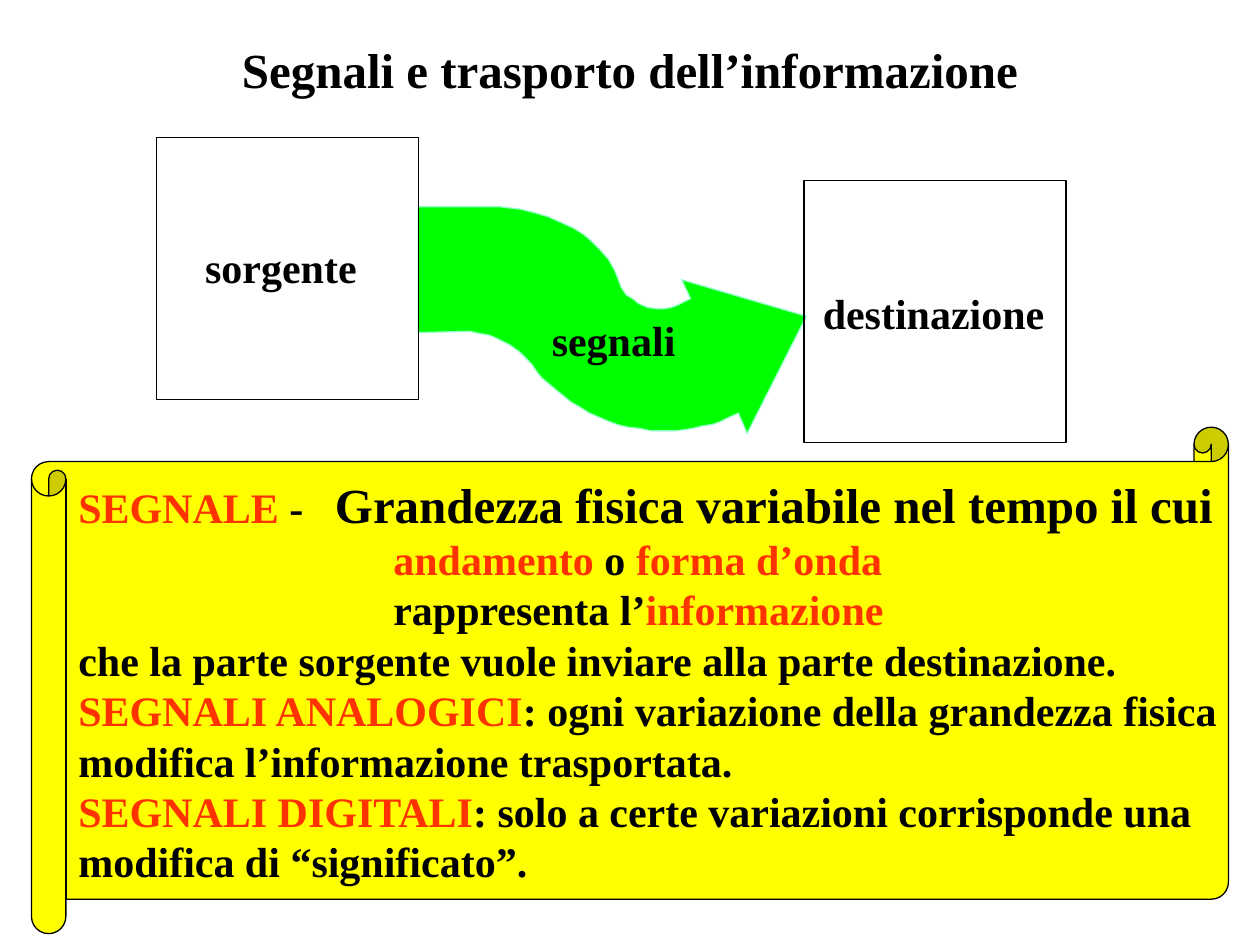
from pptx import Presentation
from pptx.dml.color import RGBColor
from pptx.enum.shapes import MSO_SHAPE
from pptx.enum.text import MSO_ANCHOR, PP_ALIGN
from pptx.util import Inches, Pt

BLACK = RGBColor(0x00, 0x00, 0x00)
RED = RGBColor(0xFF, 0x33, 0x00)
YELLOW = RGBColor(0xFF, 0xFF, 0x00)
GREEN = RGBColor(0x00, 0xFF, 0x00)
MINT = RGBColor(0x99, 0xFF, 0xCC)

ARROW_POINTS = [
    (332, 264), (332, 164), (396, 164), (404, 165), (413, 166), (425, 169),
    (435, 172), (444, 176), (455, 181), (463, 186), (469, 191), (476, 198),
    (483, 206), (488, 215), (490, 220), (493, 228), (497, 234), (502, 237),
    (507, 241), (514, 244), (521, 245), (527, 245), (533, 244), (538, 242),
    (548, 237), (541, 222), (640, 251), (593, 344), (586, 328), (577, 332),
    (571, 335), (565, 337), (558, 338), (550, 340), (544, 341), (536, 342),
    (526, 342), (517, 342), (507, 340), (498, 339), (490, 337), (482, 334),
    (475, 331), (468, 328), (460, 323), (453, 319), (447, 314), (442, 310),
    (436, 305), (430, 300), (426, 295), (422, 289), (418, 285), (414, 281),
    (412, 279), (409, 277), (405, 274), (401, 272), (397, 270), (393, 268),
    (388, 266), (382, 265), (377, 264), (373, 263),
]

DEFINITION = [
    (0, [("SEGNALE", RED, 24), (" -   ", BLACK, 24),
         ("Grandezza fisica variabile nel tempo il cui", BLACK, 28)]),
    (2.5, [("andamento", RED, 24), (" o ", BLACK, 24), ("forma d’onda", RED, 24)]),
    (2.5, [("rappresenta l’", BLACK, 24), ("informazione", RED, 24)]),
    (0, [("che la parte sorgente vuole inviare alla parte destinazione.", BLACK, 24)]),
    (0, [("SEGNALI ANALOGICI", RED, 24),
         (": ogni variazione della grandezza fisica", BLACK, 24)]),
    (0, [("modifica l’informazione trasportata.", BLACK, 24)]),
    (0, [("SEGNALI DIGITALI", RED, 24),
         (": solo a certe variazioni corrisponde una", BLACK, 24)]),
    (0, [("modifica di “significato”.", BLACK, 24)]),
]


class SlideBuilder:
    font_format = {"name": "Times New Roman", "bold": True}

    def __init__(self, slide):
        self.slide = slide

    def add_run(self, paragraph, text, color=BLACK, size=24):
        run = paragraph.add_run()
        run.text = text
        for attribute, value in {**self.font_format, "size": Pt(size)}.items():
            setattr(run.font, attribute, value)
        run.font.color.rgb = color

    def paint(self, shape, fill, line):
        shape.shadow.inherit = False
        if fill is None:
            shape.fill.background()
        else:
            shape.fill.solid()
            shape.fill.fore_color.rgb = fill
        shape.line.color.rgb = line
        shape.line.width = Pt(0.75)

    def title(self, text, left, top, width, height):
        title = self.slide.shapes.title
        place = {"left": left, "top": top, "width": width, "height": height}
        for attribute, value in place.items():
            setattr(title, attribute, Inches(value))
        title.text_frame.vertical_anchor = MSO_ANCHOR.MIDDLE
        paragraph = title.text_frame.paragraphs[0]
        paragraph.alignment = PP_ALIGN.CENTER
        self.add_run(paragraph, text, size=28)

    def label(self, text, left, top, width):
        box = self.slide.shapes.add_textbox(
            Inches(left), Inches(top), Inches(width), Inches(0.5))
        box.text_frame.word_wrap = False
        paragraph = box.text_frame.paragraphs[0]
        paragraph.alignment = PP_ALIGN.CENTER
        self.add_run(paragraph, text)

    def square(self, left, top, side=2.08):
        shape = self.slide.shapes.add_shape(
            MSO_SHAPE.RECTANGLE, Inches(left), Inches(top), Inches(side), Inches(side))
        self.paint(shape, None, BLACK)

    def arrow(self, points):
        builder = self.slide.shapes.build_freeform(*points[0], scale=Inches(0.01))
        builder.add_line_segments(points[1:], close=True)
        self.paint(builder.convert_to_shape(), GREEN, MINT)

    def scroll(self, lines, left, top, width, height):
        shape = self.slide.shapes.add_shape(
            MSO_SHAPE.HORIZONTAL_SCROLL,
            Inches(left), Inches(top), Inches(width), Inches(height))
        shape.adjustments[0] = 0.068
        self.paint(shape, YELLOW, BLACK)
        frame = shape.text_frame
        frame.word_wrap = False
        frame.vertical_anchor = MSO_ANCHOR.MIDDLE
        for index, (indent, runs) in enumerate(lines):
            paragraph = frame.add_paragraph() if index else frame.paragraphs[0]
            paragraph.alignment = PP_ALIGN.LEFT
            if indent:
                paragraph._p.get_or_add_pPr().set("marL", str(Inches(indent)))
            for run in runs:
                self.add_run(paragraph, *run)


def main():
    presentation = Presentation()
    presentation.slide_width = Inches(10)
    presentation.slide_height = Inches(7.5)
    slide = presentation.slides.add_slide(presentation.slide_layouts[5])
    builder = SlideBuilder(slide)
    builder.title("Segnali e trasporto dell’informazione", 0.25, 0.17, 9.5, 0.75)
    builder.scroll(DEFINITION, 0.25, 3.39, 9.5, 4.02)
    builder.arrow(ARROW_POINTS)
    builder.label("segnali", 4.28, 2.45, 1.18)
    builder.label("sorgente", 1.53, 1.87, 1.4)
    builder.square(1.24, 1.09)
    builder.label("destinazione", 6.43, 2.23, 1.96)
    builder.square(6.38, 1.43)
    presentation.save("out.pptx")


if __name__ == "__main__":
    main()
